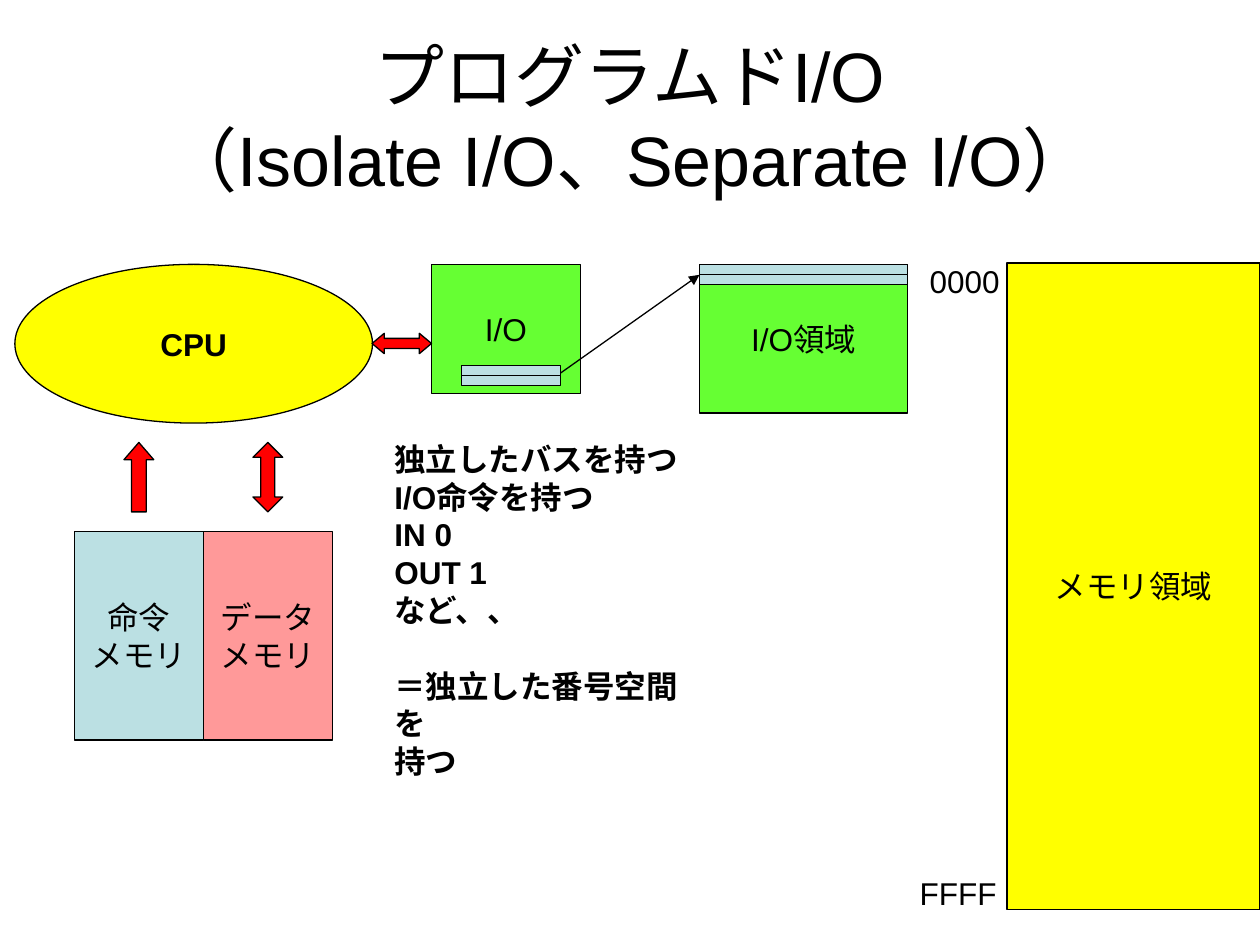
from lxml import etree
from pptx import Presentation
from pptx.dml.color import RGBColor
from pptx.enum import shapes, text
from pptx.oxml.ns import qn
from pptx.util import Cm, Pt

COLORS = {
    "black": "000000",
    "yellow": "FFFF00",
    "green": "66FF33",
    "blue": "BBE0E3",
    "pink": "FF9999",
    "red": "FF0000",
}
SHAPE = shapes.MSO_SHAPE
ANCHOR = text.MSO_ANCHOR
ALIGN = text.PP_ALIGN


def color(name):
    return RGBColor.from_string(COLORS[name])


class Diagram:
    font = "Arial"
    size = 18
    line_width = 0.75

    def __init__(self, slide):
        self.s = slide

    def add_text(self, p, words, size, bold):
        r = p.add_run()
        r.text = words
        r.font.name = self.font
        r.font.size = Pt(size)
        r.font.bold = bold
        r.font.color.rgb = color("black")

    def add_lines(self, tf, lines, align, size, bold):
        for i, words in enumerate(lines):
            p = tf.add_paragraph() if i else tf.paragraphs[0]
            p.alignment = align
            self.add_text(p, words, size, bold)

    def outline(self, line):
        line.color.rgb = color("black")
        line.width = Pt(self.line_width)

    def shape(self, kind, box, fill, lines=(), bold=False, adj=()):
        sp = self.s.shapes.add_shape(kind, *map(Cm, box))
        sp.shadow.inherit = False
        sp.fill.solid()
        sp.fill.fore_color.rgb = color(fill)
        self.outline(sp.line)
        for i, value in enumerate(adj):
            sp.adjustments[i] = value
        tf = sp.text_frame
        tf.word_wrap = False
        tf.vertical_anchor = ANCHOR.MIDDLE
        self.add_lines(tf, lines, ALIGN.CENTER, self.size, bold)

    def label(self, box, lines, size=size, bold=False, wrap=False,
              align=ALIGN.LEFT, anchor=ANCHOR.TOP):
        sp = self.s.shapes.add_textbox(*map(Cm, box))
        tf = sp.text_frame
        tf.word_wrap = wrap
        tf.vertical_anchor = anchor
        self.add_lines(tf, lines, align, size, bold)
        return tf

    def registers(self, left, top, width, height=0.2):
        for i in range(2):
            self.shape(SHAPE.RECTANGLE, (left, top + i * height, width, height), "blue")

    def arrow(self, x1, y1, x2, y2):
        c = self.s.shapes.add_connector(
            shapes.MSO_CONNECTOR.STRAIGHT, Cm(x1), Cm(y1), Cm(x2), Cm(y2))
        self.outline(c.line)
        props = c._element.spPr
        etree.SubElement(props.find(qn("a:ln")), qn("a:tailEnd"), type="triangle")
        etree.SubElement(props, qn("a:effectLst"))


def main():
    prs = Presentation()
    prs.slide_width, prs.slide_height = Cm(25.4), Cm(19.05)
    d = Diagram(prs.slides.add_slide(prs.slide_layouts[6]))

    d.label((1.27, 0.76, 22.86, 3.18),
            ["プログラムドI/O", "（Isolate I/O、Separate I/O）"],
            size=40, wrap=True, align=ALIGN.CENTER, anchor=ANCHOR.MIDDLE)

    d.shape(SHAPE.OVAL, (0.3, 5.33, 7.21, 3.2), "yellow", ["CPU"], bold=True)
    memories = [
        ("命令", "blue", SHAPE.UP_ARROW, 0.58),
        ("データ", "pink", SHAPE.UP_DOWN_ARROW, 0.47),
    ]
    width = 2.6
    for i, (name, fill, kind, head) in enumerate(memories):
        left = 1.5 + i * width
        d.shape(SHAPE.RECTANGLE, (left, 10.72, width, 4.2), fill, [name, "メモリ"])
        d.shape(kind, (left + 1, 8.92, 0.6, 1.4), "red", adj=(0.5, head))

    d.shape(SHAPE.RECTANGLE, (8.7, 5.33, 3, 2.6), "green", ["I/O"])
    d.shape(SHAPE.RECTANGLE, (20.3, 5.3, 5.1, 13.03), "yellow", ["メモリ領域"])
    d.shape(SHAPE.RECTANGLE, (14.1, 5.33, 4.2, 3), "green", ["I/O領域"])
    d.label((18.49, 5.16, 1.93, 1.02), ["0000"])
    d.label((18.29, 17.5, 2.06, 1.02), ["FFFF"])
    d.registers(9.3, 7.37, 2)
    d.registers(14.1, 5.33, 4.2)
    d.arrow(11.3, 7.52, 14.1, 5.54)
    d.shape(SHAPE.LEFT_RIGHT_ARROW, (7.5, 6.72, 1.2, 0.41), "red", adj=(0.5, 0.6))

    tf = d.label((7.7, 8.74, 6.58, 6.35),
                 ["独立したバスを持つ", "I/O命令を持つ", "IN 0", "OUT 1", "など、、",
                  "＝独立した番号空間を", "持つ"],
                 bold=True, wrap=True)
    tf.paragraphs[5].space_before = Pt(21.6)

    prs.save("out.pptx")


if __name__ == "__main__":
    main()
